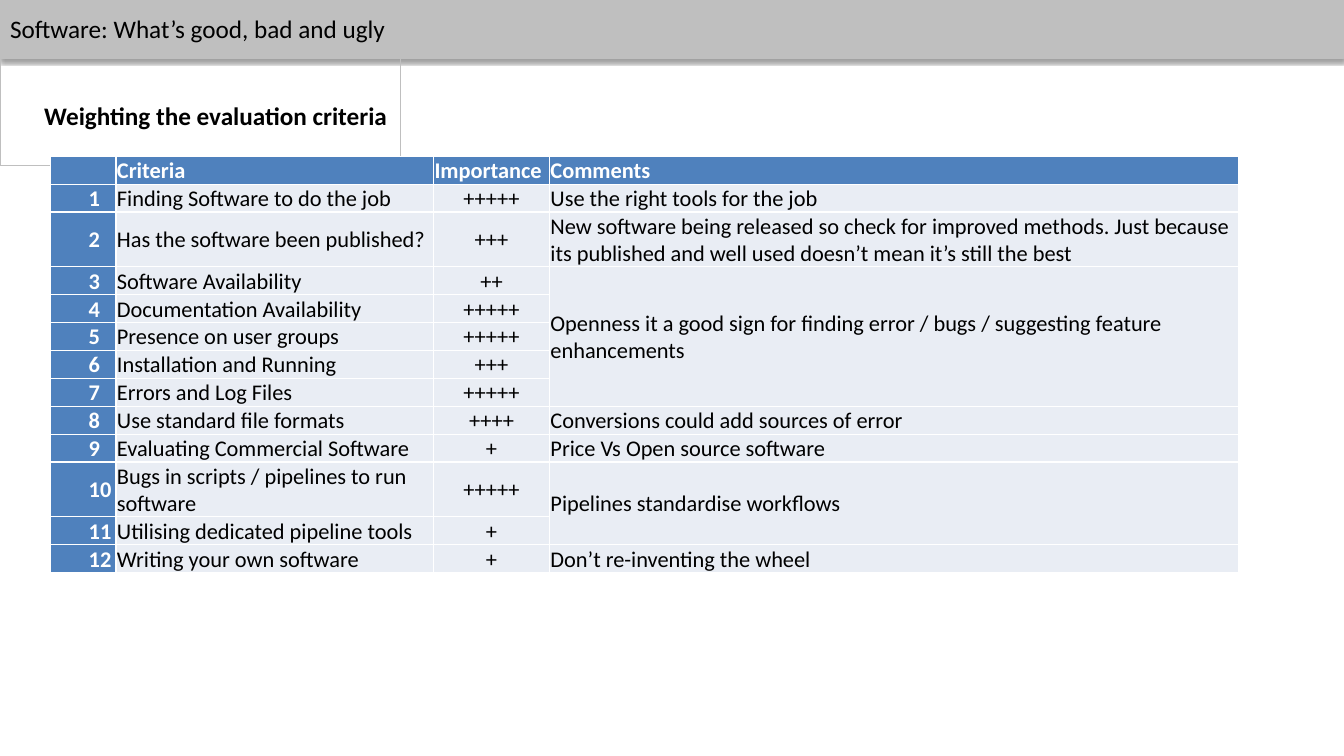
"""Build a slide that weights the criteria for evaluating software."""
from dataclasses import dataclass

from lxml.etree import fromstring
from pptx import Presentation
from pptx.dml.color import RGBColor
from pptx.enum.shapes import MSO_SHAPE
from pptx.enum.text import MSO_ANCHOR, MSO_AUTO_SIZE, PP_ALIGN
from pptx.oxml.ns import nsdecls
from pptx.shapes.autoshape import Shape
from pptx.slide import Slide
from pptx.table import _Cell
from pptx.text.text import TextFrame
from pptx.util import Inches, Pt

COLOURS = {"bar": "BFBFBF", "header": "4F81BD", "body": "E9EDF4",
           "dark": "000000", "light": "FFFFFF"}
FONT = "Calibri"
COLUMN_WIDTHS = (0.65, 3.15, 1.15, 6.83)
ROW_HEIGHT = 0.22
HEADINGS = ("", "Criteria", "Importance", "Comments")


@dataclass(frozen=True)
class Criterion:
    """One row of the table; a comment may span several rows."""

    name: str
    importance: int
    comment: str = ""
    comment_rows: int = 1


CRITERIA = (
    Criterion("Finding Software to do the job", 5, "Use the right tools for the job"),
    Criterion("Has the software been published?", 3,
              "New software being released so check for improved methods. Just because "
              "its published and well used doesn’t mean it’s still the best"),
    Criterion("Software Availability", 2,
              "Openness it a good sign for finding error / bugs / suggesting feature "
              "enhancements", 5),
    Criterion("Documentation Availability", 5),
    Criterion("Presence on user groups", 5),
    Criterion("Installation and Running", 3),
    Criterion("Errors and Log Files", 5),
    Criterion("Use standard file formats", 4, "Conversions could add sources of error"),
    Criterion("Evaluating Commercial Software", 1, "Price Vs Open source software"),
    Criterion("Bugs in scripts / pipelines to run software", 5,
              "Pipelines standardise workflows", 2),
    Criterion("Utilising dedicated pipeline tools", 1),
    Criterion("Writing your own software", 1, "Don’t re-inventing the wheel"),
)


def colour(name: str) -> RGBColor:
    """Look up a named colour."""
    return RGBColor.from_string(COLOURS[name])


def write(frame: TextFrame, text: str, size: int, ink: str, bold: bool = False,
          align: PP_ALIGN = PP_ALIGN.LEFT) -> None:
    """Put one formatted paragraph into a text frame."""
    frame.text = text
    para = frame.paragraphs[0]
    para.alignment = align
    for span in para.runs:
        span.font.name = FONT
        span.font.size = Pt(size)
        span.font.bold = bold
        span.font.color.rgb = colour(ink)
    if not text:
        para._p.get_or_add_endParaRPr().set("sz", str(size * 100))


def write_line(box: Shape, text: str, bold: bool = False) -> None:
    """Format a box that holds a single unwrapped line."""
    frame = box.text_frame
    write(frame, text, 18, "dark", bold)
    frame.word_wrap = False
    frame.auto_size = MSO_AUTO_SIZE.SHAPE_TO_FIT_TEXT
    frame.vertical_anchor = MSO_ANCHOR.TOP


def add_bar(page: Slide) -> None:
    """Draw the shadowed bar behind the title."""
    bar = page.shapes.add_shape(MSO_SHAPE.RECTANGLE, 0, 0, Inches(13.33), Inches(0.58))
    bar.fill.solid()
    bar.fill.fore_color.rgb = colour("bar")
    bar.line.color.rgb = colour("bar")
    bar.line.width = Pt(0.75)
    bar._element.spPr.append(fromstring(
        f'<a:effectLst {nsdecls("a")}><a:outerShdw blurRad="{Pt(3.1)}" dist="{Pt(1.6)}" '
        'dir="5400000" rotWithShape="0"><a:srgbClr val="000000"><a:alpha val="38000"/>'
        "</a:srgbClr></a:outerShdw></a:effectLst>"))
    page.shapes._spTree.insert(2, bar._element)


def add_title(page: Slide) -> None:
    """Place the slide title on the bar."""
    title = page.shapes.title
    title.left, title.top = Inches(0), Inches(0.08)
    title.width, title.height = Inches(3.97), Inches(0.4)
    title.line.color.rgb = colour("bar")
    title.line.width = Pt(0.75)
    write_line(title, "Software: What’s good, bad and ugly")


def fill_cell(cell: _Cell, text: str, header: bool = False, indent: float = 0.01,
              align: PP_ALIGN = PP_ALIGN.LEFT) -> None:
    """Write and format one table cell."""
    cell.margin_left = Inches(indent)
    cell.margin_top = cell.margin_right = Inches(0.01)
    cell.margin_bottom = 0
    cell.vertical_anchor = MSO_ANCHOR.MIDDLE
    cell.fill.solid()
    cell.fill.fore_color.rgb = colour("header" if header else "body")
    write(cell.text_frame, text, 16, "light" if header else "dark", header, align)


def add_criteria_table(page: Slide) -> None:
    """Draw the table of weighted criteria."""
    row_count = len(CRITERIA) + 1
    table = page.shapes.add_table(
        row_count, len(HEADINGS), Inches(0.5), Inches(1.55),
        Inches(sum(COLUMN_WIDTHS)), Inches(ROW_HEIGHT * row_count)).table
    table.first_col = True
    table.horz_banding = False
    for column, width in zip(table.columns, COLUMN_WIDTHS):
        column.width = Inches(width)
    for row in table.rows:
        row.height = Inches(ROW_HEIGHT)
    for index, heading in enumerate(HEADINGS):
        fill_cell(table.cell(0, index), heading, header=True)
        table.cell(0, index).vertical_anchor = MSO_ANCHOR.BOTTOM
    for number, criterion in enumerate(CRITERIA, start=1):
        fill_cell(table.cell(number, 0), str(number), header=True, indent=0.38)
        fill_cell(table.cell(number, 1), criterion.name)
        fill_cell(table.cell(number, 2), "+" * criterion.importance,
                  align=PP_ALIGN.CENTER)
        fill_cell(table.cell(number, 3), criterion.comment)
        if criterion.comment_rows > 1:
            last = number + criterion.comment_rows - 1
            table.cell(number, 3).merge(table.cell(last, 3))


def main() -> None:
    """Build and save the deck."""
    deck = Presentation()
    deck.slide_width, deck.slide_height = Inches(13.33), Inches(7.5)
    page = deck.slides.add_slide(deck.slide_layouts[5])
    add_bar(page)
    add_title(page)
    heading = page.shapes.add_textbox(Inches(0.34), Inches(0.95), Inches(3.63), Inches(0.4))
    write_line(heading, "Weighting the evaluation criteria", bold=True)
    add_criteria_table(page)
    deck.save("out.pptx")


if __name__ == "__main__":
    main()
